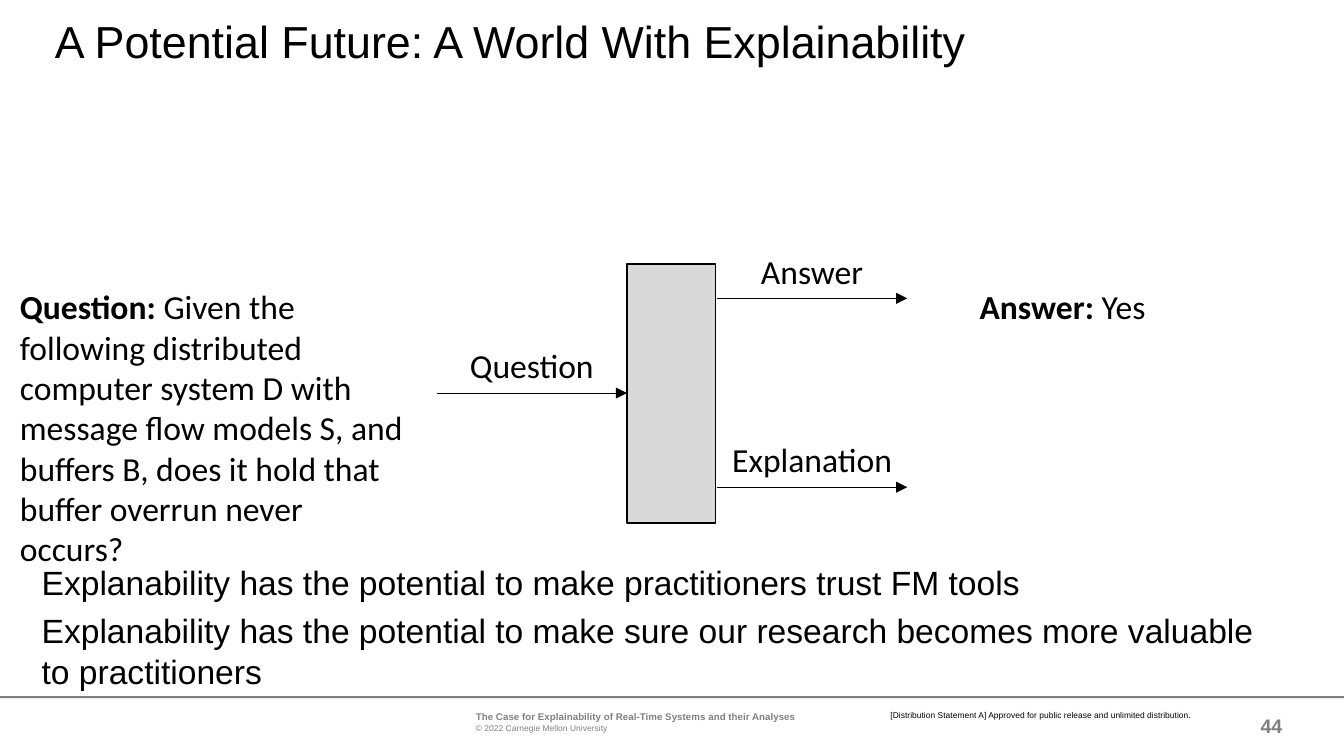
"""Build the slide about a future world with explainability."""
from lxml import etree
from pptx import Presentation
from pptx.dml.color import RGBColor
from pptx.enum.shapes import MSO_CONNECTOR, MSO_SHAPE
from pptx.enum.text import MSO_ANCHOR, PP_ALIGN
from pptx.oxml.ns import qn
from pptx.util import Pt

PX = 4572
THEME = {
    "black": RGBColor(0, 0, 0),
    "gray": RGBColor(0x80, 0x80, 0x80),
    "box": RGBColor(0xD9, 0xD9, 0xD9),
    "head": "Arial",
    "body": "Calibri",
    "title": 24,
    "text": 18,
    "number": 10.5,
    "footer": 5.25,
    "small": 4.5,
}


def add_text(s, at, paragraphs, font, color="black", align=PP_ALIGN.LEFT,
             anchor=MSO_ANCHOR.TOP, insets=(0, 0, 0, 0)):
    """Add a wrapped text box from paragraphs of (text, size, bold) runs."""
    tf = s.shapes.add_textbox(*[v * PX for v in at]).text_frame
    tf.word_wrap = True
    tf.vertical_anchor = anchor
    tf.margin_left, tf.margin_top, tf.margin_right, tf.margin_bottom = [v * PX for v in insets]
    for i, runs in enumerate(paragraphs):
        p = tf.add_paragraph() if i else tf.paragraphs[0]
        p.alignment = align
        for text, size, bold in runs:
            r = p.add_run()
            r.text = text
            r.font.name = THEME[font]
            r.font.size = Pt(THEME[size])
            r.font.bold = bold
            r.font.color.rgb = THEME[color]
    return tf


def add_rect(s, at, fill):
    """Add a flat rectangle without an outline."""
    sp = s.shapes.add_shape(MSO_SHAPE.RECTANGLE, *[v * PX for v in at])
    sp.shadow.inherit = False
    sp.fill.solid()
    sp.fill.fore_color.rgb = THEME[fill]
    sp.line.fill.background()
    return sp


prs = Presentation()
prs.slide_width, prs.slide_height = 2000 * PX, 1125 * PX
s = prs.slides.add_slide(prs.slide_layouts[6])

add_text(s, (1820, 1050, 88, 60), [[("44", "number", True)]], "head", "gray",
         PP_ALIGN.RIGHT, MSO_ANCHOR.MIDDLE)
add_text(s, (708, 1058, 584, 32), [
    [("The Case for Explainability of Real-Time Systems and their Analyses", "footer", True)],
    [("© 2022 Carnegie Mellon University", "small", False)],
], "head", "gray", insets=(0, 0, 8, 0))
add_text(s, (1325, 1057, 458, 16), [[(
    "[Distribution Statement A] Approved for public release and unlimited distribution.",
    "small", False)]], "head")
add_rect(s, (0, 1036, 2000, 3), "gray")

tf = add_text(s, (62, 20, 1850, 92), [[
    ("A Potential Future: A World With Explainability", "title", False)]],
    "head", insets=(20, 10, 20, 10))
tf.paragraphs[0].line_spacing = 0.9

tool = add_rect(s, (933, 393, 132, 386), "box")
tool.line.color.rgb = THEME["black"]
tool.line.width = Pt(1)

for label, x, y in [("Question", 650, 585), ("Answer", 1067, 444), ("Explanation", 1067, 725)]:
    arrow = s.shapes.add_connector(MSO_CONNECTOR.STRAIGHT, x * PX, y * PX, (x + 283) * PX, y * PX)
    arrow.line.color.rgb = THEME["black"]
    arrow.line.width = Pt(0.5)
    etree.SubElement(arrow.line._get_or_add_ln(), qn("a:tailEnd"), type="triangle")
    etree.SubElement(arrow._element.spPr, qn("a:effectLst"))
    add_text(s, (x, y - 81, 283, 80), [[(label, "text", False)]], "body",
             align=PP_ALIGN.CENTER, insets=(0, 10, 0, 10))

for lead, text, x, w, h in [
    ("Question: ", "Given the following distributed computer system D with message flow models S, "
     "and buffers B, does it hold that buffer overrun never occurs?", 10, 612, 444),
    ("Answer: ", "Yes", 1438, 550, 80),
]:
    add_text(s, (x, 416, w, h), [[(lead, "text", True), (text, "text", False)]],
             "body", insets=(20, 10, 20, 10))

for text, y, h in [
    ("Explanability has the potential to make practitioners trust FM tools", 836, 60),
    ("Explanability has the potential to make sure our research becomes more valuable "
     "to practitioners", 908, 122),
]:
    add_text(s, (62, y, 1850, h), [[(text, "text", False)]], "head")

prs.save("out.pptx")
